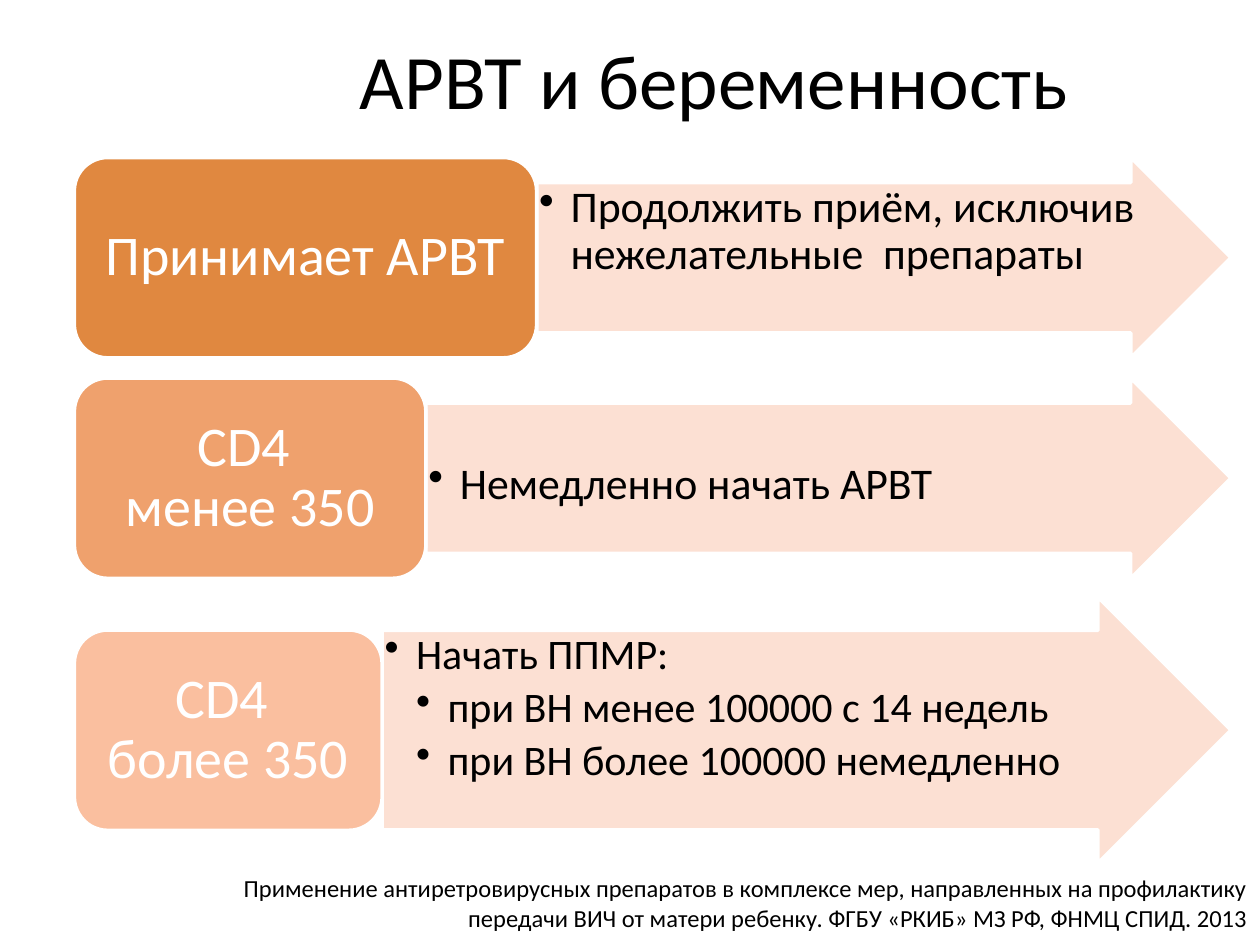
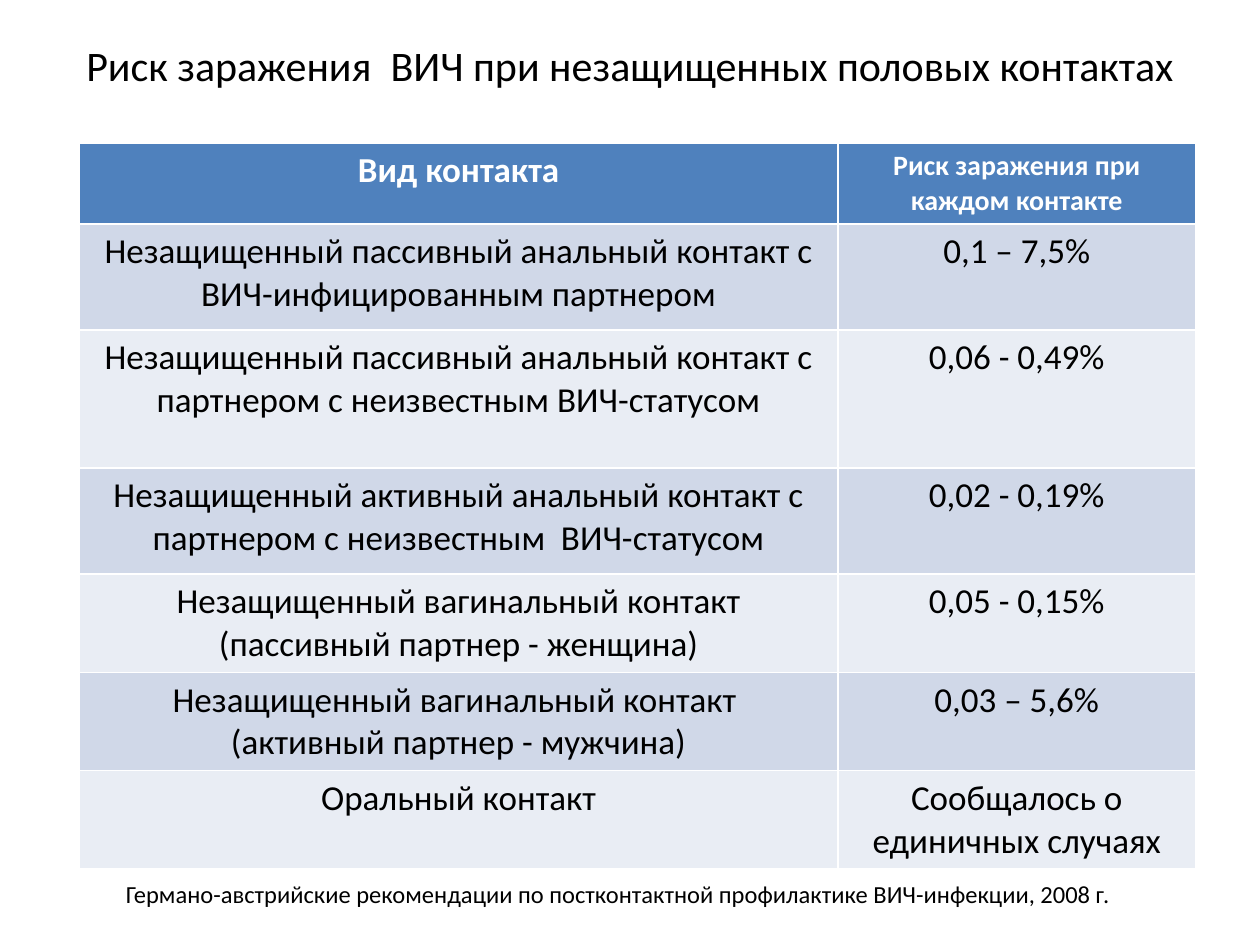
from lxml.etree import SubElement
from pptx import Presentation
from pptx.dml.color import RGBColor
from pptx.enum.shapes import MSO_SHAPE
from pptx.enum.text import MSO_ANCHOR, MSO_AUTO_SIZE, PP_ALIGN
from pptx.oxml.ns import qn
from pptx.util import Pt

FONT = "Calibri"
BLACK = RGBColor(0x00, 0x00, 0x00)
WHITE = RGBColor(0xFF, 0xFF, 0xFF)
ARROW_PINK = RGBColor(0xFC, 0xDD, 0xCF)
DARK_ORANGE = RGBColor(0xE0, 0x88, 0x40)
ORANGE = RGBColor(0xEF, 0xA1, 0x6D)
LIGHT_ORANGE = RGBColor(0xFA, 0xBF, 0x9F)
HEADER_BLUE = RGBColor(0x4F, 0x81, 0xBD)
BANDS = (RGBColor(0xD0, 0xD8, 0xE8), RGBColor(0xE9, 0xED, 0xF4))

GROUPS_LEFT, ARROWS_RIGHT = 42.5, 703.4
GROUP_HEIGHT = 114.5
BULLET_STEP = 18

GROUPS = [
    {"label": "Принимает АРВТ", "color": DARK_ORANGE, "top": 90, "width": 264.2,
     "arrow_height": GROUP_HEIGHT, "size": 25, "drop": 0,
     "advice": [(1, "Продолжить приём, исключив нежелательные  препараты")]},
    {"label": "CD4 \vменее 350", "color": ORANGE, "top": 216, "width": 200.9,
     "arrow_height": GROUP_HEIGHT, "size": 25, "drop": 32,
     "advice": [(1, "Немедленно начать АРВТ")]},
    {"label": "CD4 \vболее 350", "color": LIGHT_ORANGE, "top": 360, "width": 175.9,
     "arrow_height": 152, "size": 24, "drop": 0,
     "advice": [(1, "Начать ППМР:"),
                (2, "при ВН менее 100000 с 14 недель"),
                (2, "при ВН более 100000 немедленно")]},
]

RISK_COLUMNS = (433.4, 204.5)
RISK_ROWS = [
    (45, "Вид контакта", "Риск заражения при каждом контакте"),
    (60.5, "Незащищенный пассивный анальный контакт с ВИЧ-инфицированным партнером",
     "0,1 – 7,5%"),
    (79, "Незащищенный пассивный анальный контакт с партнером с неизвестным ВИЧ-статусом",
     "0,06 - 0,49%"),
    (60.5, "Незащищенный активный анальный контакт с партнером с неизвестным  ВИЧ-статусом",
     "0,02 - 0,19%"),
    (55.5, "Незащищенный вагинальный контакт (пассивный партнер - женщина)",
     "0,05 - 0,15%"),
    (55.5, "Незащищенный вагинальный контакт \v(активный партнер - мужчина)",
     "0,03 – 5,6%"),
    (55.5, "Оральный контакт", "Сообщалось о единичных случаях"),
]


class DeckBuilder:
    def __init__(self):
        self.deck = Presentation()
        self.deck.slide_width, self.deck.slide_height = Pt(720), Pt(540)
        self.page = None

    def set_text(self, paragraph, text, size, color=BLACK, align=PP_ALIGN.CENTER, bold=False):
        paragraph.text = text
        paragraph.alignment = align
        font = paragraph.font
        font.name, font.size, font.bold = FONT, Pt(size), bold
        font.color.rgb = color

    def inset(self, frame, side, top, bottom):
        frame.margin_left = frame.margin_right = Pt(side)
        frame.margin_top, frame.margin_bottom = Pt(top), Pt(bottom)

    def add_page(self, title, left, width, height, size):
        self.page = self.deck.slides.add_slide(self.deck.slide_layouts[5])
        box = self.page.shapes.title
        box.left, box.top, box.width, box.height = Pt(left), Pt(0), Pt(width), Pt(height)
        frame = box.text_frame
        frame.auto_size = MSO_AUTO_SIZE.NONE
        frame.vertical_anchor = MSO_ANCHOR.MIDDLE
        self.set_text(frame.paragraphs[0], title, size)

    def add_block(self, kind, left, top, width, height, color):
        block = self.page.shapes.add_shape(kind, Pt(left), Pt(top), Pt(width), Pt(height))
        block.shadow.inherit = False
        block.fill.solid()
        block.fill.fore_color.rgb = color
        block.line.color.rgb = WHITE
        block.line.width = Pt(2)
        return block

    def add_label(self, left, top, width, height, color, text):
        block = self.add_block(MSO_SHAPE.ROUNDED_RECTANGLE, left, top, width, height, color)
        frame = block.text_frame
        frame.vertical_anchor = MSO_ANCHOR.MIDDLE
        self.inset(frame, 9.4, 4.7, 4.7)
        paragraph = frame.paragraphs[0]
        self.set_text(paragraph, text, 32, WHITE)
        paragraph.line_spacing = 0.9

    def add_arrow(self, left, top, width, height, advice, size, drop):
        arrow = self.add_block(MSO_SHAPE.RIGHT_ARROW, left, top, width, height, ARROW_PINK)
        arrow.adjustments[0] = 0.75
        color = arrow.element.spPr.find(qn("a:solidFill"))[0]
        SubElement(color, qn("a:alpha"), val="90000")
        frame = arrow.text_frame
        frame.vertical_anchor = MSO_ANCHOR.TOP
        self.inset(frame, 1.4, 1.4 + drop, 1.4)
        for index, (level, text) in enumerate(advice):
            paragraph = frame.add_paragraph() if index else frame.paragraphs[0]
            paragraph.level = level
            paragraph.line_spacing = 0.9
            paragraph.space_after = Pt(4.5)
            properties = paragraph._p.get_or_add_pPr()
            properties.set("marL", str(Pt(BULLET_STEP * level)))
            properties.set("indent", str(-Pt(BULLET_STEP)))
            SubElement(properties, qn("a:buChar"), char="•")
            self.set_text(paragraph, text, size, align=PP_ALIGN.LEFT)

    def add_risk_table(self, left, top):
        height = sum(row[0] for row in RISK_ROWS)
        table = self.page.shapes.add_table(
            len(RISK_ROWS), len(RISK_COLUMNS), Pt(left), Pt(top),
            Pt(sum(RISK_COLUMNS)), Pt(height)).table
        for column, width in zip(table.columns, RISK_COLUMNS):
            column.width = Pt(width)
        for index, (row_height, *texts) in enumerate(RISK_ROWS):
            table.rows[index].height = Pt(row_height)
            header = index == 0
            for column, text in enumerate(texts):
                cell = table.cell(index, column)
                cell.fill.solid()
                cell.fill.fore_color.rgb = HEADER_BLUE if header else BANDS[(index - 1) % 2]
                self.set_text(cell.text_frame.paragraphs[0], text,
                              16 if header and column else 20,
                              WHITE if header else BLACK, bold=header)

    def add_source(self, left, top, width, text, align):
        box = self.page.shapes.add_textbox(Pt(left), Pt(top), Pt(width), Pt(41))
        box.text_frame.word_wrap = True
        self.set_text(box.text_frame.paragraphs[0], text, 14, align=align)


def main():
    builder = DeckBuilder()

    builder.add_page("АРВТ и беременность", 113, 590.4, 90, 44)
    for group in GROUPS:
        top, width, arrow_height = group["top"], group["width"], group["arrow_height"]
        arrow_left = GROUPS_LEFT + width
        arrow_top = top + (GROUP_HEIGHT - arrow_height) / 2
        builder.add_arrow(arrow_left, arrow_top, ARROWS_RIGHT - arrow_left, arrow_height,
                          group["advice"], group["size"], group["drop"])
        builder.add_label(GROUPS_LEFT, top, width, GROUP_HEIGHT,
                          group["color"], group["label"])
    builder.add_source(
        73.4, 495.4, 646.6,
        "Применение антиретровирусных препаратов в комплексе мер, направленных на "
        "профилактику передачи ВИЧ от матери ребенку. ФГБУ «РКИБ» МЗ РФ, ФНМЦ СПИД. 2013",
        PP_ALIGN.RIGHT)

    builder.add_page("Риск заражения  ВИЧ при незащищенных половых контактах",
                     36.7, 646.6, 73.4, 24)
    builder.add_risk_table(45.4, 81.7)
    builder.add_source(
        64.8, 499, 595.4,
        "Германо-австрийские рекомендации по постконтактной профилактике ВИЧ-инфекции, 2008 г.",
        PP_ALIGN.JUSTIFY)

    builder.deck.save("out.pptx")


if __name__ == "__main__":
    main()
